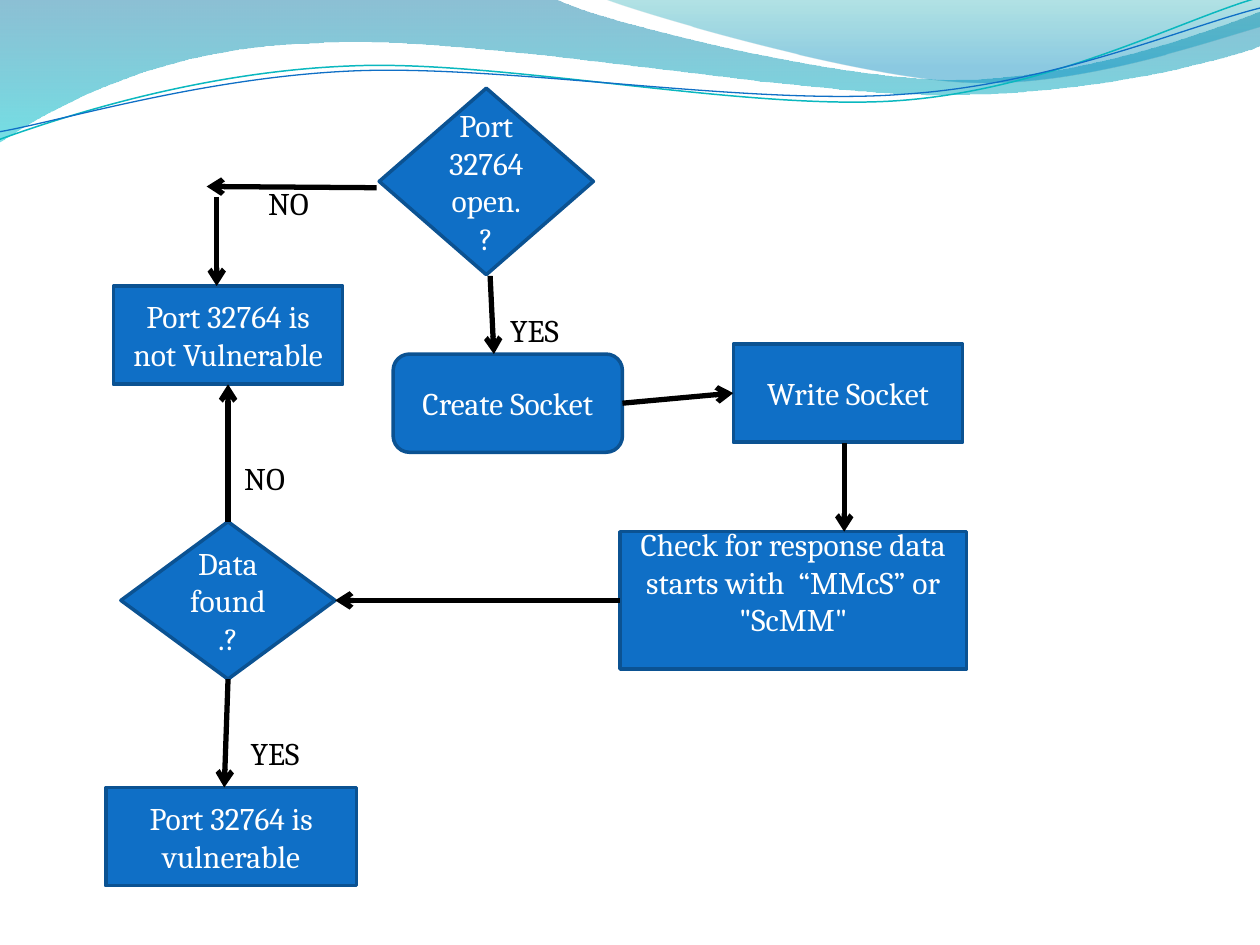
from lxml import etree
from pptx import Presentation
from pptx.dml.color import RGBColor
from pptx.enum.shapes import MSO_CONNECTOR, MSO_SHAPE
from pptx.enum.text import MSO_ANCHOR, PP_ALIGN
from pptx.oxml.ns import qn
from pptx.util import Inches, Pt

DIAMOND = MSO_SHAPE.DIAMOND
RECT = MSO_SHAPE.RECTANGLE
ROUND_RECT = MSO_SHAPE.ROUNDED_RECTANGLE
STRAIGHT = MSO_CONNECTOR.STRAIGHT
MIDDLE = MSO_ANCHOR.MIDDLE
CENTER, LEFT_ALIGN = PP_ALIGN.CENTER, PP_ALIGN.LEFT
TOP, LEFT, BOTTOM, RIGHT = range(4)

BLUE = RGBColor(0x0F, 0x6F, 0xC6)
DARK_BLUE = RGBColor(0x0B, 0x52, 0x92)
TEAL = RGBColor(0x0A, 0xB8, 0xBF)
WHITE = RGBColor(0xFF, 0xFF, 0xFF)
BLACK = RGBColor(0x00, 0x00, 0x00)
BAND_STOPS = [(0, RGBColor(0x00, 0x74, 0xA1), 45), (100, RGBColor(0x00, 0xC6, 0xCF), 55)]
CREST_STOPS = [(0, RGBColor(0x00, 0xA1, 0xA9), 30), (80, RGBColor(0x00, 0x8B, 0xBF), 45)]

FONT = "Cambria"
WAVE_TILT = -2.7

BAND = [(0, 0), (4.4, -0.01),
        (4.76, 0.17, 6.64, 0.63, 7.58, 0.63), (8.53, 0.63, 9.58, 0.26, 10, 0.09),
        (10.01, 0.36),
        (9.83, 0.44, 8.7, 0.76, 7.46, 0.75), (6.22, 0.75, 3.82, 0.28, 2.57, 0.34),
        (1.29, 0.36, 0.46, 0.83, -0.01, 1.13), (0, 0)]
CREST = [(4.79, -0.01), (5.09, 0.11, 6.82, 0.62, 7.69, 0.65),
         (8.56, 0.69, 9.61, 0.32, 10, 0.21), (10, 0), (4.79, -0.01)]
TEAL_WAVE = [(-0.02, 0.87), (0.47, 0.72, 1.58, 0.41, 2.78, 0.42),
             (3.96, 0.42, 5.91, 0.93, 7.12, 0.9), (8.32, 0.87, 9.4, 0.36, 10, 0.22)]
BLUE_WAVE = [(-0.02, 0.81), (0.46, 0.75, 1.64, 0.45, 2.83, 0.46),
             (4.04, 0.47, 5.96, 0.89, 7.16, 0.85), (8.35, 0.83, 9.42, 0.42, 10.02, 0.3)]

NODES = {
    "port": (DIAMOND, 2.17, 0, 1.7, 1.48, "Port 32764 open.?"),
    "create": (ROUND_RECT, 2.28, 2.11, 1.82, 0.78, "Create Socket"),
    "data": (DIAMOND, 0.12, 3.44, 1.7, 1.25, "Data found .?"),
    "safe": (RECT, 0.06, 1.57, 1.82, 0.78, "Port 32764 is not Vulnerable"),
    "vulnerable": (RECT, 0, 5.55, 1.99, 0.78, "Port 32764 is vulnerable"),
    "write": (RECT, 4.98, 2.03, 1.82, 0.78, "Write Socket"),
    "check": (RECT, 4.08, 3.52, 2.75, 1.09,
              "Check for response data starts with  “MMcS” or \"ScMM\""),
}
ARROWS = [
    ((5.86, 2.82), (5.86, 3.52)),
    (("check", LEFT), ("data", RIGHT)),
    (("data", TOP), ("safe", BOTTOM)),
    (("data", BOTTOM), (0.94, 5.55)),
    ((3.05, 1.49), (3.08, 2.11)),
    ((2.15, 0.79), (0.8, 0.78)),
    ((0.88, 0.86), (0.88, 1.57)),
    (("create", RIGHT), ("write", LEFT)),
]
LABELS = [("YES", 3.11, 1.72, 0.88), ("YES", 1.05, 5.08, 0.76),
          ("NO", 1.19, 0.71, 0.64), ("NO", 1.0, 2.89, 0.53)]


def add_outline(slide, left, top, segments, close):
    """Add a freeform of straight and cubic segments."""
    points = [(left + Inches(seg[-2]), top + Inches(seg[-1])) for seg in segments]
    builder = slide.shapes.build_freeform(*points[0])
    builder.add_line_segments(points[1:], close=close)
    sp = builder.convert_to_shape()
    sp.shadow.inherit = False
    for step, seg in zip(list(sp._element.iter(qn("a:lnTo"))), segments[1:]):
        if len(seg) == 6:
            step.tag = qn("a:cubicBezTo")
            for i in (0, 2):
                x = left + Inches(seg[i]) - sp.left
                y = top + Inches(seg[i + 1]) - sp.top
                step.insert(i // 2, etree.Element(qn("a:pt"), x=str(x), y=str(y)))
    return sp


def draw_waves(slide, left, top):
    """Draw the wave header from its top left corner."""
    for segments, stops in ((BAND, BAND_STOPS), (CREST, CREST_STOPS)):
        sp = add_outline(slide, left, top, segments, True)
        sp.line.fill.background()
        sp.fill.gradient()
        sp.fill.gradient_angle = 270
        for stop, (_, color, _) in zip(sp.fill.gradient_stops, stops):
            stop.color.rgb = color
        for gs, (pos, _, alpha) in zip(sp._element.spPr.iter(qn("a:gs")), stops):
            gs.set("pos", str(pos * 1000))
            etree.SubElement(gs[0], qn("a:alpha"), val=str(alpha * 1000))
    for segments, color, width in ((TEAL_WAVE, TEAL, 0.85), (BLUE_WAVE, BLUE, 0.75)):
        sp = add_outline(slide, left, top, segments, False)
        sp.rotation = WAVE_TILT
        sp.fill.background()
        sp.line.color.rgb = color
        sp.line.width = Pt(width)


def write_text(sp, text, color, align):
    """Write one wrapped paragraph into a shape."""
    tf = sp.text_frame
    tf.word_wrap = True
    p = tf.paragraphs[0]
    p.alignment = align
    r = p.add_run()
    r.text = text
    r.font.name = FONT
    r.font.size = Pt(18)
    r.font.color.rgb = color
    return tf


def add_node(slide, left, top, kind, x, y, w, h, text):
    """Add one step of the flowchart."""
    sp = slide.shapes.add_shape(kind, left + Inches(x), top + Inches(y), Inches(w), Inches(h))
    sp.shadow.inherit = False
    sp.fill.solid()
    sp.fill.fore_color.rgb = BLUE
    sp.line.color.rgb = DARK_BLUE
    sp.line.width = Pt(2)
    write_text(sp, text, WHITE, CENTER).vertical_anchor = MIDDLE
    return sp


def add_arrow(slide, left, top, start, end, nodes):
    """Add an arrow between points or sides of nodes."""
    ends = [(0, 0) if pt[0] in nodes else pt for pt in (start, end)]
    (x1, y1), (x2, y2) = [(left + Inches(x), top + Inches(y)) for x, y in ends]
    cxn = slide.shapes.add_connector(STRAIGHT, x1, y1, x2, y2)
    for pt, connect in ((start, cxn.begin_connect), (end, cxn.end_connect)):
        if pt[0] in nodes:
            connect(nodes[pt[0]], pt[1])
    cxn.line.color.rgb = BLACK
    cxn.line.width = Pt(3)
    etree.SubElement(cxn.line._get_or_add_ln(), qn("a:tailEnd"), type="arrow")
    etree.SubElement(cxn._element.spPr, qn("a:effectLst"))


def draw_flowchart(slide, left, top):
    """Draw the nodes, arrows and labels from the top left corner."""
    nodes = {name: add_node(slide, left, top, *node) for name, node in NODES.items()}
    nodes["check"].text_frame.margin_bottom = Inches(0.35)
    for start, end in ARROWS:
        add_arrow(slide, left, top, start, end, nodes)
    for text, x, y, w in LABELS:
        sp = slide.shapes.add_textbox(left + Inches(x), top + Inches(y), Inches(w), Inches(0.4))
        write_text(sp, text, BLACK, LEFT_ALIGN)


def main():
    """Build the slide and save it."""
    prs = Presentation()
    prs.slide_width, prs.slide_height = Inches(10), Inches(7.5)
    slide = prs.slides.add_slide(prs.slide_layouts[6])
    draw_waves(slide, Inches(0), Inches(0))
    draw_flowchart(slide, Inches(0.84), Inches(0.7))
    prs.save("out.pptx")


if __name__ == "__main__":
    main()
